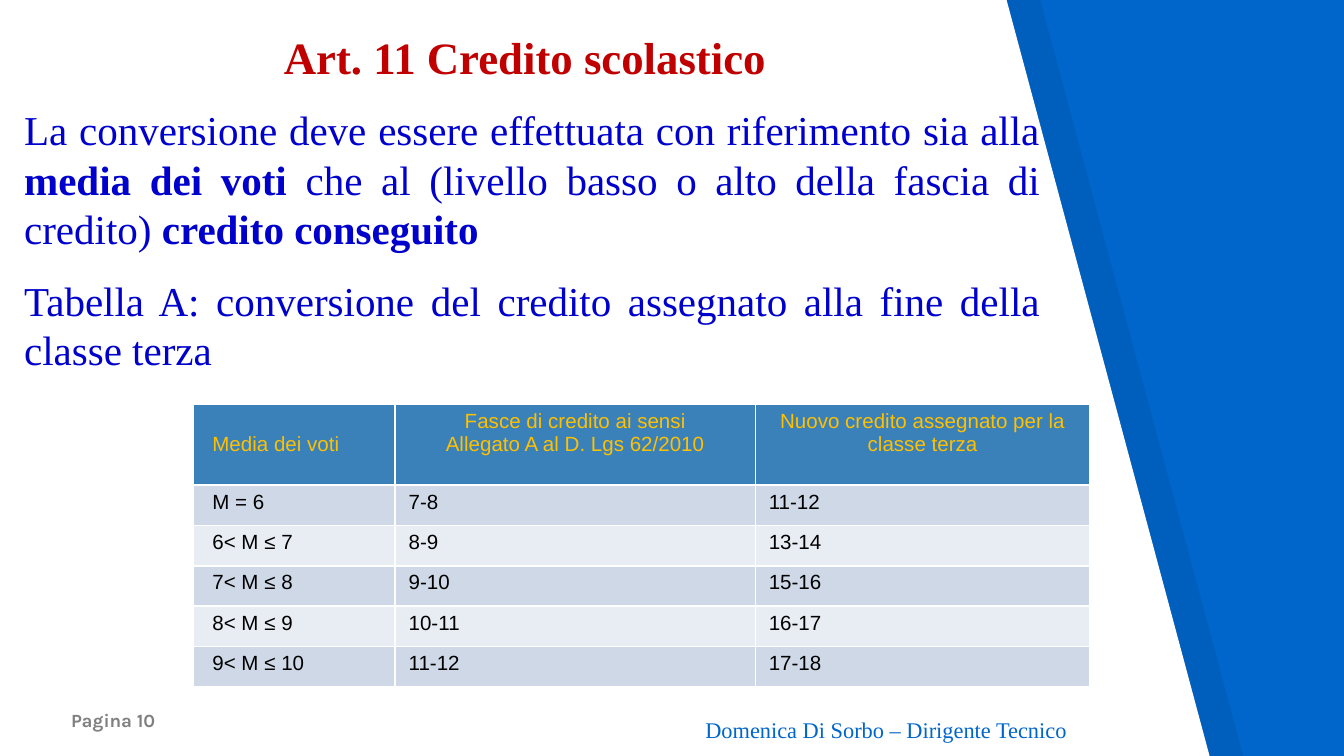
from lxml.etree import SubElement
from pptx import Presentation
from pptx.dml.color import RGBColor
from pptx.enum.shapes import MSO_SHAPE
from pptx.enum.text import MSO_ANCHOR, MSO_AUTO_SIZE, PP_ALIGN
from pptx.oxml.ns import qn
from pptx.util import Inches, Pt

COLORS = {
    "blue": "0066CC", "white": "FFFFFF", "black": "000000", "grey": "808080",
    "red": "C00000", "ink": "0000CC", "gold": "FFC000",
    "header": "3A81BA", "band_dark": "CED8E7", "band_light": "E8EDF3",
}
SERIF, SANS, PAGE_FONT = "Times New Roman", "Arial", "Karla"
WIDTH = 10
HEIGHT = WIDTH * 9 / 16

HEADING = "Art. 11 Credito scolastico"
PARAGRAPHS = [
    [("La conversione deve essere effettuata con riferimento sia alla", False),
     (" media dei voti ", True),
     ("che al (livello basso o alto della fascia di credito)", False),
     (" credito conseguito", True)],
    [("Tabella A: conversione del credito assegnato alla fine della classe terza", False)],
]
PAGE_LABEL = "Pagina 10"
AUTHOR = "Domenica Di Sorbo – Dirigente Tecnico"
CREDITS = [
    ("Media dei voti", "Fasce di credito ai sensi\nAllegato A al D. Lgs 62/2010",
     "Nuovo credito assegnato per la classe terza"),
    ("M = 6", "7-8", "11-12"),
    ("6< M ≤ 7", "8-9", "13-14"),
    ("7< M ≤ 8", "9-10", "15-16"),
    ("8< M ≤ 9", "10-11", "16-17"),
    ("9< M ≤ 10", "11-12", "17-18"),
]
COLUMN_WIDTHS = [1.5, 2.68, 2.49]
HEADER_HEIGHT, ROW_HEIGHT = 0.6, 0.3
PANELS = [(0.25, "black", 7), (0, "white", 100)]
PANEL_TOP_WIDTH, PANEL_BOTTOM_WIDTH = 7.49, 9


def rgb(name):
    return RGBColor.from_string(COLORS[name])


def style(font, name, size, color, bold=False):
    font.name, font.size, font.bold = name, Pt(size), bold
    font.color.rgb = rgb(color)


def place(shape, left, top, width, height):
    shape.left, shape.top = Inches(left), Inches(top)
    shape.width, shape.height = Inches(width), Inches(height)


def prepare(frame, anchor=MSO_ANCHOR.TOP, inset=0.1):
    frame.word_wrap = True
    frame.auto_size = MSO_AUTO_SIZE.NONE
    frame.vertical_anchor = anchor
    frame.margin_left = frame.margin_right = Inches(0.1)
    frame.margin_top = frame.margin_bottom = Inches(inset)


def add_panel(slide, left, color, opacity):
    outline = slide.shapes.build_freeform(Inches(left), 0)
    outline.add_line_segments([
        (Inches(left), Inches(HEIGHT)),
        (Inches(left + PANEL_BOTTOM_WIDTH), Inches(HEIGHT)),
        (Inches(left + PANEL_TOP_WIDTH), 0),
    ], close=True)
    panel = outline.convert_to_shape()
    panel.shadow.inherit = False
    panel.line.fill.background()
    panel.fill.solid()
    panel.fill.fore_color.rgb = rgb(color)
    if opacity < 100:
        tint = panel._element.spPr.find(qn("a:solidFill"))[0]
        SubElement(tint, qn("a:alpha"), val=str(opacity * 1000))


def add_borders(cell):
    properties = cell._tc.get_or_add_tcPr()
    for side in ("lnL", "lnR", "lnT", "lnB"):
        border = SubElement(properties, qn(f"a:{side}"), w=str(Pt(1)))
        fill = SubElement(border, qn("a:solidFill"))
        SubElement(fill, qn("a:srgbClr"), val=COLORS["white"])


def add_credit_table(slide):
    height = HEADER_HEIGHT + ROW_HEIGHT * (len(CREDITS) - 1)
    table = slide.shapes.add_table(
        len(CREDITS), len(COLUMN_WIDTHS), Inches(1.44), Inches(3.01),
        Inches(sum(COLUMN_WIDTHS)), Inches(height)).table
    for column, width in zip(table.columns, COLUMN_WIDTHS):
        column.width = Inches(width)
    for r, values in enumerate(CREDITS):
        table.rows[r].height = Inches(ROW_HEIGHT if r else HEADER_HEIGHT)
        band = "header" if r == 0 else "band_dark" if r % 2 else "band_light"
        for c, value in enumerate(values):
            cell = table.cell(r, c)
            add_borders(cell)
            cell.fill.solid()
            cell.fill.fore_color.rgb = rgb(band)
            cell.margin_left = Inches(0.1 if c else 0.14)
            cell.margin_right = Inches(0.1)
            cell.margin_top = cell.margin_bottom = Inches(0.04)
            if r == 0 and c == 0:
                cell.vertical_anchor = MSO_ANCHOR.MIDDLE
            cell.text_frame.text = value
            for paragraph in cell.text_frame.paragraphs:
                paragraph.alignment = PP_ALIGN.CENTER if r == 0 and c else PP_ALIGN.LEFT
                for run in paragraph.runs:
                    style(run.font, SANS, 11, "black" if r else "gold")


def main():
    deck = Presentation()
    deck.slide_width, deck.slide_height = Inches(WIDTH), Inches(HEIGHT)
    slide = deck.slides.add_slide(deck.slide_layouts[1])
    slide.background.fill.solid()
    slide.background.fill.fore_color.rgb = rgb("blue")
    for panel in PANELS:
        add_panel(slide, *panel)

    page = slide.shapes.add_textbox(Inches(0.43), Inches(5.09), Inches(6.18), Inches(0.45))
    prepare(page.text_frame, MSO_ANCHOR.BOTTOM)
    page.text_frame.text = PAGE_LABEL
    style(page.text_frame.paragraphs[0].runs[0].font, PAGE_FONT, 10, "grey", True)

    heading, body = slide.shapes.title, slide.placeholders[1]
    for placeholder in (heading, body):
        slide.shapes._spTree.append(placeholder._element)
        prepare(placeholder.text_frame)

    place(heading, 0.56, 0.12, 6.69, 0.68)
    heading.text_frame.text = HEADING
    title_line = heading.text_frame.paragraphs[0]
    title_line.alignment = PP_ALIGN.CENTER
    style(title_line.runs[0].font, SERIF, 24, "red", True)

    place(body, 0.08, 0.68, 7.76, 4.59)
    for i, pieces in enumerate(PARAGRAPHS):
        paragraph = body.text_frame.add_paragraph() if i else body.text_frame.paragraphs[0]
        properties = paragraph._p.get_or_add_pPr()
        properties.set("marL", "0")
        properties.set("indent", "0")
        SubElement(properties, qn("a:buNone"))
        paragraph.alignment = PP_ALIGN.JUSTIFY
        paragraph.space_before = Pt(12 if i else 0)
        for words, bold in pieces:
            run = paragraph.add_run()
            run.text = words
            style(run.font, SERIF, 22, "ink", bold)

    author = slide.shapes.add_shape(
        MSO_SHAPE.RECTANGLE, Inches(4.93), Inches(5.28), Inches(3.33), Inches(0.3))
    author.shadow.inherit = False
    author.fill.solid()
    author.fill.fore_color.rgb = rgb("white")
    author.line.fill.background()
    prepare(author.text_frame, inset=0.05)
    author.text_frame.text = AUTHOR
    author.text_frame.paragraphs[0].alignment = PP_ALIGN.CENTER
    style(author.text_frame.paragraphs[0].runs[0].font, SERIF, 12, "blue")

    add_credit_table(slide)
    deck.save("out.pptx")


if __name__ == "__main__":
    main()
